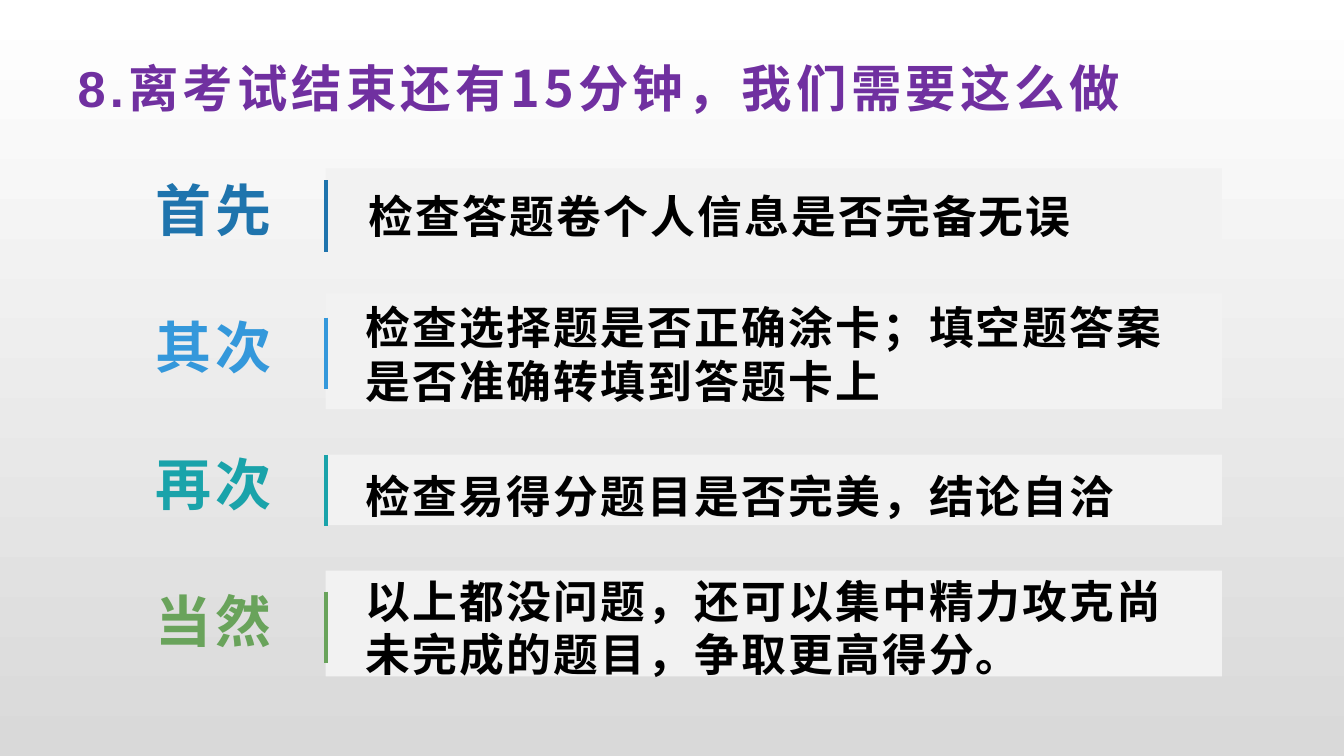
from dataclasses import dataclass
from lxml import etree
from pptx import Presentation
from pptx.dml.color import RGBColor
from pptx.enum.shapes import MSO_CONNECTOR, MSO_SHAPE
from pptx.enum.text import MSO_ANCHOR, MSO_AUTO_SIZE, PP_ALIGN
from pptx.oxml.ns import qn
from pptx.util import Inches, Pt

RECT = MSO_SHAPE.RECTANGLE
STRAIGHT = MSO_CONNECTOR.STRAIGHT
MIDDLE, BOTTOM = MSO_ANCHOR.MIDDLE, MSO_ANCHOR.BOTTOM
LEFT, CENTER = PP_ALIGN.LEFT, PP_ALIGN.CENTER
NO_FIT = MSO_AUTO_SIZE.NONE


@dataclass(frozen=True)
class Theme:
    """Colours, fonts and type sizes of the slide."""
    top: str = "FFFFFF"
    base: str = "D9D9D9"
    panel: str = "F2F2F2"
    ink: str = "000000"
    title: str = "7030A0"
    latin: str = "Arial"
    han: str = "Noto Sans CJK SC"
    head: int = 36
    label: int = 40
    body: int = 32
    rule: int = 3


@dataclass(frozen=True)
class Step:
    """One row: its words, colour, panel box and body text box."""
    label: str
    body: str
    color: str
    top: float
    height: float
    text_top: float
    text_left: float = 3.53
    width: float = 8.55
    lines: float = 1.0


THEME = Theme()
STEPS = [
    Step("首先", "检查答题卷个人信息是否完备无误", "1F74AD",
         1.67, 0.83, 1.73, 3.56, 8.05, 1.2),
    Step("其次", "检查选择题是否正确涂卡；填空题答案是否准确转填到答题卡上",
         "3498DB", 2.91, 1.15, 3.15),
    Step("再次", "检查易得分题目是否完美，结论自洽", "1AA3AA",
         4.51, 0.7, 4.5, lines=1.2),
    Step("当然", "以上都没问题，还可以集中精力攻克尚未完成的题目，争取更高得分。",
         "69A35B", 5.66, 1.05, 5.86),
]


def put_text(shape, runs, size, color, space, align=LEFT, anchor=MIDDLE,
             lines=1.0, pad=0.05):
    """Fill a shape with bold runs, each a pair of text and font."""
    frame = shape.text_frame
    frame.word_wrap = True
    frame.auto_size = NO_FIT
    frame.vertical_anchor = anchor
    frame.margin_left = frame.margin_right = Inches(0.1)
    frame.margin_top = frame.margin_bottom = Inches(pad)
    para = frame.paragraphs[0]
    para.alignment = align
    para.line_spacing = lines
    for text, face in runs:
        run = para.add_run()
        run.text = text
        font = run.font
        font.name, font.size, font.bold = face, Pt(size), True
        font.color.rgb = RGBColor.from_string(color)
        props = run._r.get_or_add_rPr()
        props.set("spc", str(int(space * 100)))
        etree.SubElement(props, qn("a:ea")).set("typeface", THEME.han)


def add_box(slide, left, top, width, height):
    """Add a text box placed in inches."""
    return slide.shapes.add_textbox(*map(Inches, (left, top, width, height)))


def add_title(slide, left, top, width, height):
    """Place and fill the title."""
    title = slide.shapes.title
    title.left, title.top = Inches(left), Inches(top)
    title.width, title.height = Inches(width), Inches(height)
    runs = [("8.", THEME.latin),
            ("离考试结束还有15分钟，我们需要这么做", THEME.han)]
    put_text(title, runs, THEME.head, THEME.title, 3)


def add_step(slide, step, left, top, width, height):
    """Draw a row whose rule runs down the left side of its panel."""
    panel = slide.shapes.add_shape(
        RECT, *map(Inches, (left, step.top, width, step.height)))
    panel.shadow.inherit = False
    panel.fill.solid()
    panel.fill.fore_color.rgb = RGBColor.from_string(THEME.panel)
    panel.line.fill.background()

    label = add_box(slide, left - 2, top + 0.12, 1.78, 0.5)
    put_text(label, [(step.label, THEME.latin)], THEME.label, step.color, 3,
             align=CENTER, anchor=BOTTOM, lines=1.2, pad=0)

    body = add_box(slide, step.text_left, step.text_top, step.width, 0.72)
    put_text(body, [(step.body, THEME.han)], THEME.body, THEME.ink, 1.5,
             lines=step.lines)

    rule = slide.shapes.add_connector(
        STRAIGHT, *map(Inches, (left, top, left, top + height)))
    rule.line.color.rgb = RGBColor.from_string(step.color)
    rule.line.width = Pt(THEME.rule)
    etree.SubElement(rule._element.spPr, qn("a:effectLst"))


def paint_back(slide):
    """Shade the background from top to bottom."""
    fill = slide.background.fill
    fill.gradient()
    fill.gradient_angle = 270
    for stop, color, place in zip(fill.gradient_stops,
                                  (THEME.top, THEME.base), (0, 1)):
        stop.color.rgb = RGBColor.from_string(color)
        stop.position = place


def main():
    """Build and save the slide."""
    deck = Presentation()
    deck.slide_width, deck.slide_height = Inches(13.33), Inches(7.5)
    slide = deck.slides.add_slide(deck.slide_layouts[5])
    paint_back(slide)
    add_title(slide, 0.67, 0.48, 12, 0.77)
    for row, step in enumerate(STEPS):
        add_step(slide, step, 3.23, 1.79 + 1.36 * row, 8.89, 0.71)
    deck.save("out.pptx")


if __name__ == "__main__":
    main()
